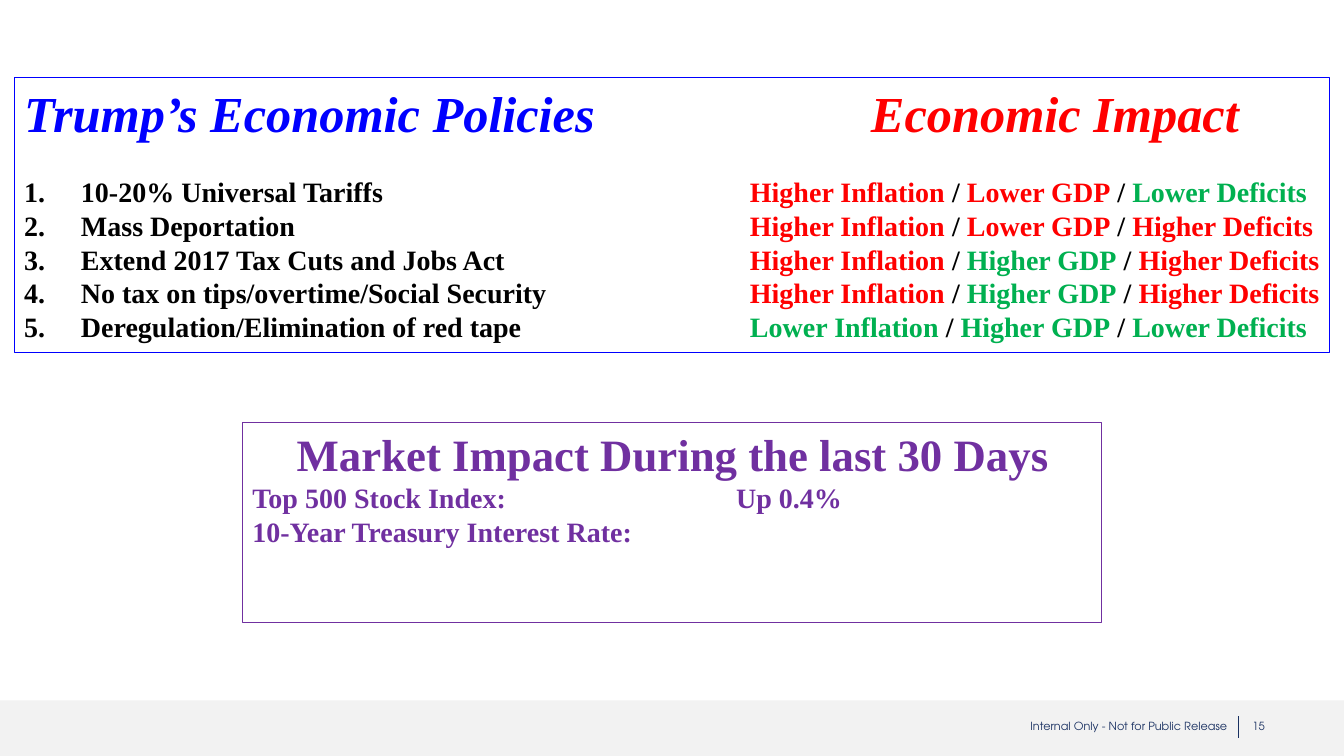
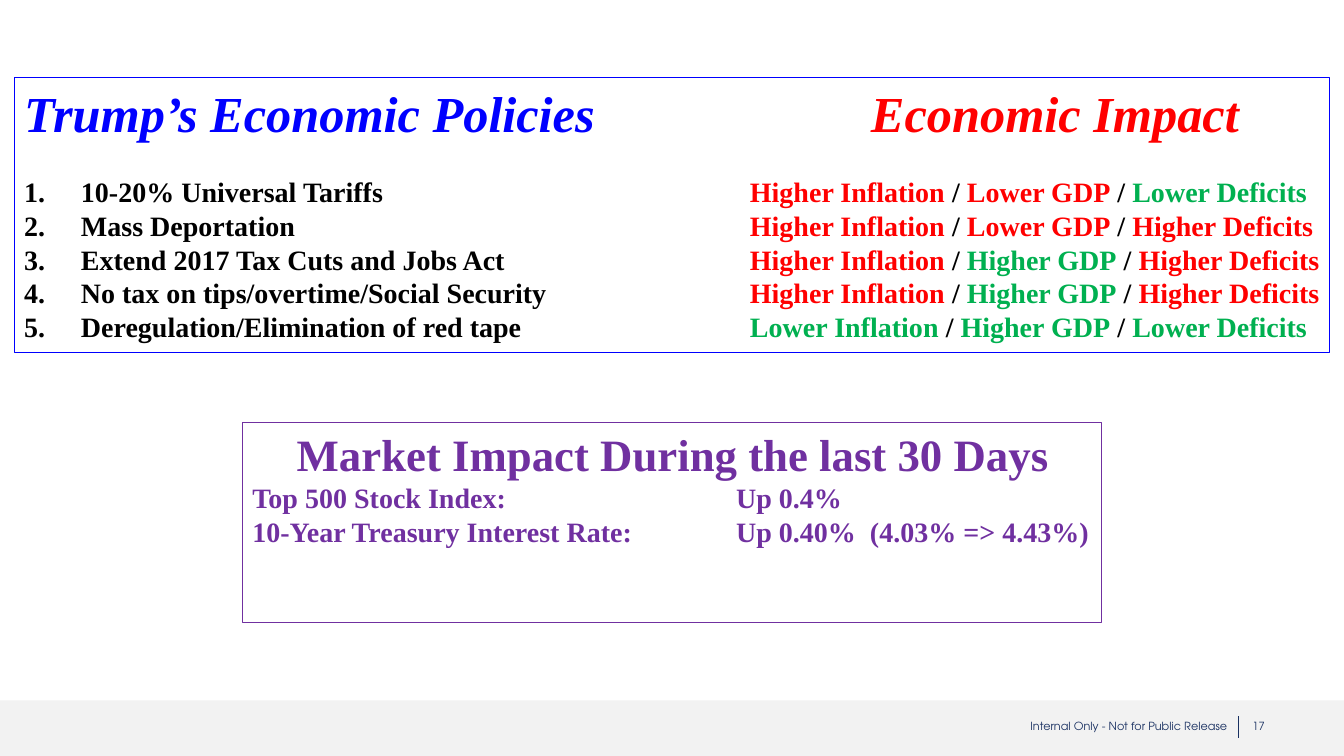
"""Build two slides on economic policies, their impact and the market response."""
from lxml import etree
from pptx import Presentation
from pptx.dml.color import RGBColor
from pptx.enum.shapes import MSO_CONNECTOR, MSO_SHAPE
from pptx.enum.text import MSO_ANCHOR, PP_ALIGN
from pptx.oxml.ns import qn
from pptx.util import Cm, Pt

RECTANGLE = MSO_SHAPE.RECTANGLE
STRAIGHT = MSO_CONNECTOR.STRAIGHT
TOP, MIDDLE = MSO_ANCHOR.TOP, MSO_ANCHOR.MIDDLE
LEFT, CENTER, RIGHT = PP_ALIGN.LEFT, PP_ALIGN.CENTER, PP_ALIGN.RIGHT

THEME = {
    "blue": RGBColor(0x00, 0x00, 0xFF),
    "red": RGBColor(0xFF, 0x00, 0x00),
    "green": RGBColor(0x00, 0xB0, 0x50),
    "purple": RGBColor(0x70, 0x30, 0xA0),
    "black": RGBColor(0x00, 0x00, 0x00),
    "navy": RGBColor(0x19, 0x30, 0x61),
    "band": RGBColor(0xF2, 0xF2, 0xF2),
    "heading": {"name": "Times New Roman", "size": Pt(36), "bold": True, "italic": True},
    "subheading": {"name": "Times New Roman", "size": Pt(32), "bold": True},
    "body": {"name": "Times New Roman", "size": Pt(20), "bold": True},
    "footer": {"name": "TeX Gyre Adventor", "size": Pt(8)},
}

POLICIES = [
    ("10-20% Universal Tariffs", ["Higher Inflation", "Lower GDP", "Lower Deficits"]),
    ("Mass Deportation", ["Higher Inflation", "Lower GDP", "Higher Deficits"]),
    ("Extend 2017 Tax Cuts and Jobs Act",
     ["Higher Inflation", "Higher GDP", "Higher Deficits"]),
    ("No tax on tips/overtime/Social Security",
     ["Higher Inflation", "Higher GDP", "Higher Deficits"]),
    ("Deregulation/Elimination of red tape",
     ["Lower Inflation", "Higher GDP", "Lower Deficits"]),
]
FAVOURABLE = {"Lower Inflation", "Higher GDP", "Lower Deficits"}
SLIDES = [("15", ""), ("17", "\tUp 0.40%  (4.03% => 4.43%)")]

HEADING_TAB, IMPACT_TAB, MARKET_TAB = Cm(21.34), Cm(18.29), Cm(12.19)
NUMBER_INDENT = Cm(1.43)


def add_panel(slide, bounds, fill=None, line=None):
    panel = slide.shapes.add_shape(RECTANGLE, *[Cm(length) for length in bounds])
    panel.shadow.inherit = False
    for part, colour in ((panel.fill, fill), (panel.line.fill, line)):
        if colour is None:
            part.background()
        else:
            part.solid()
            part.fore_color.rgb = colour
    if line is not None:
        panel.line.width = Pt(0.75)
    frame = panel.text_frame
    frame.word_wrap = True
    frame.vertical_anchor = TOP
    frame.margin_right = Cm(0.2)
    return frame


def write_line(frame, pieces, style, align=LEFT, tab=None):
    first = frame.paragraphs[0]
    paragraph = frame.add_paragraph() if first.runs else first
    paragraph.alignment = align
    if tab is not None:
        paragraph._p.get_or_add_pPr().set("defTabSz", str(int(tab)))
    for words, colour in pieces:
        run = paragraph.add_run()
        run.text = words
        run.font.color.rgb = THEME[colour]
        for attribute, value in THEME[style].items():
            setattr(run.font, attribute, value)
    return paragraph


deck = Presentation()
deck.slide_width, deck.slide_height = Cm(33.87), Cm(19.05)
blank = deck.slide_layouts[6]

for page_number, rate_change in SLIDES:
    slide = deck.slides.add_slide(blank)

    add_panel(slide, (0, 17.65, 33.87, 1.4), fill=THEME["band"])
    divider = slide.shapes.add_connector(STRAIGHT, Cm(31.2), Cm(18.05), Cm(31.2), Cm(18.6))
    divider.line.color.rgb = THEME["navy"]
    divider.line.width = Pt(0.5)
    etree.SubElement(divider._element.spPr, qn("a:effectLst"))
    for words, left, width, align in (
        ("Internal Only - Not for Public Release", 19.76, 11.43, RIGHT),
        (page_number, 31.31, 0.97, LEFT),
    ):
        footer = slide.shapes.add_textbox(Cm(left), Cm(17.93), Cm(width), Cm(0.74)).text_frame
        footer.word_wrap = True
        footer.vertical_anchor = MIDDLE
        write_line(footer, [(words, "navy")], "footer", align)

    policies = add_panel(slide, (0.36, 1.95, 33.15, 6.93), line=THEME["blue"])
    write_line(policies, [("Trump’s Economic Policies\t", "blue"), ("Economic Impact", "red")],
               "heading", tab=HEADING_TAB)
    for position, (policy, impacts) in enumerate(POLICIES):
        pieces = [(policy + "\t", "black")]
        for impact in impacts:
            pieces.append((impact, "green" if impact in FAVOURABLE else "red"))
            pieces.append((" / ", "black"))
        item = write_line(policies, pieces[:-1], "body", tab=IMPACT_TAB)
        properties = item._p.get_or_add_pPr()
        properties.set("marL", str(int(NUMBER_INDENT)))
        properties.set("indent", str(-int(NUMBER_INDENT)))
        etree.SubElement(properties, qn("a:buAutoNum"), type="arabicPeriod")
        if position == 0:
            item.space_before = Pt(23)

    market = add_panel(slide, (6.11, 10.64, 21.65, 5.05), line=THEME["purple"])
    write_line(market, [("Market Impact During the last 30 Days", "purple")],
               "subheading", CENTER)
    for reading in ("Top 500 Stock Index:\tUp 0.4%",
                    "10-Year Treasury Interest Rate:" + rate_change):
        write_line(market, [(reading, "purple")], "body", tab=MARKET_TAB)

deck.save("out.pptx")
